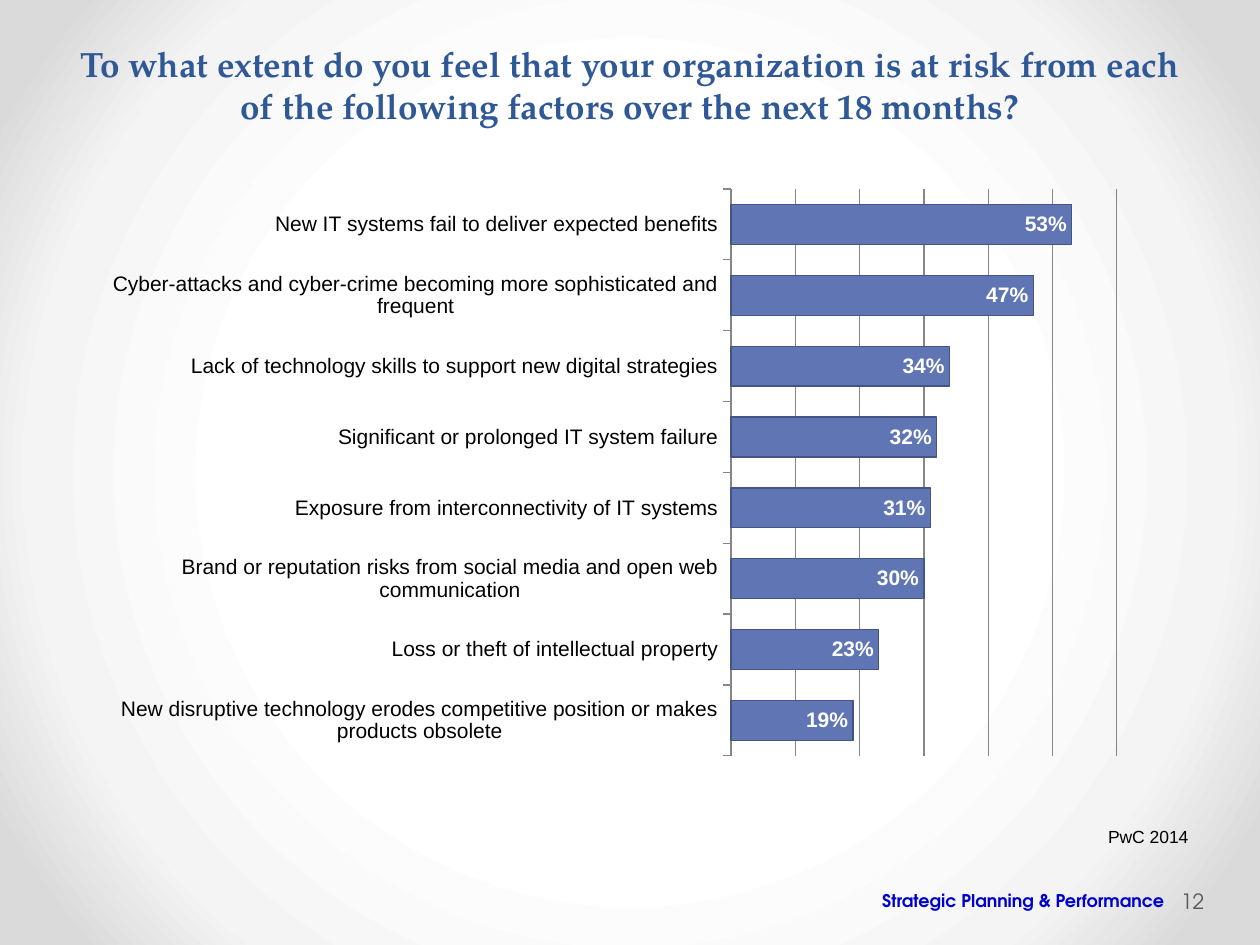
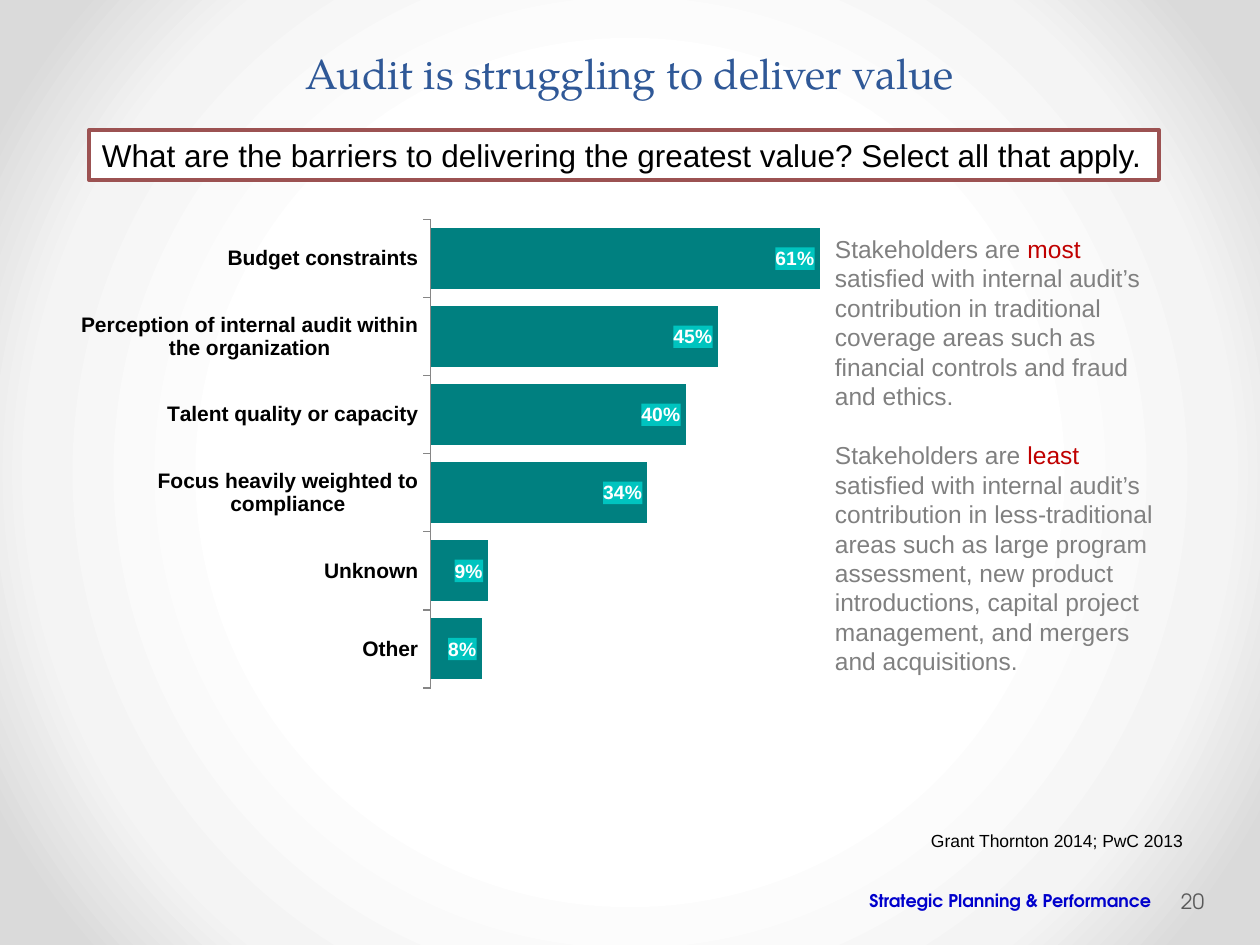
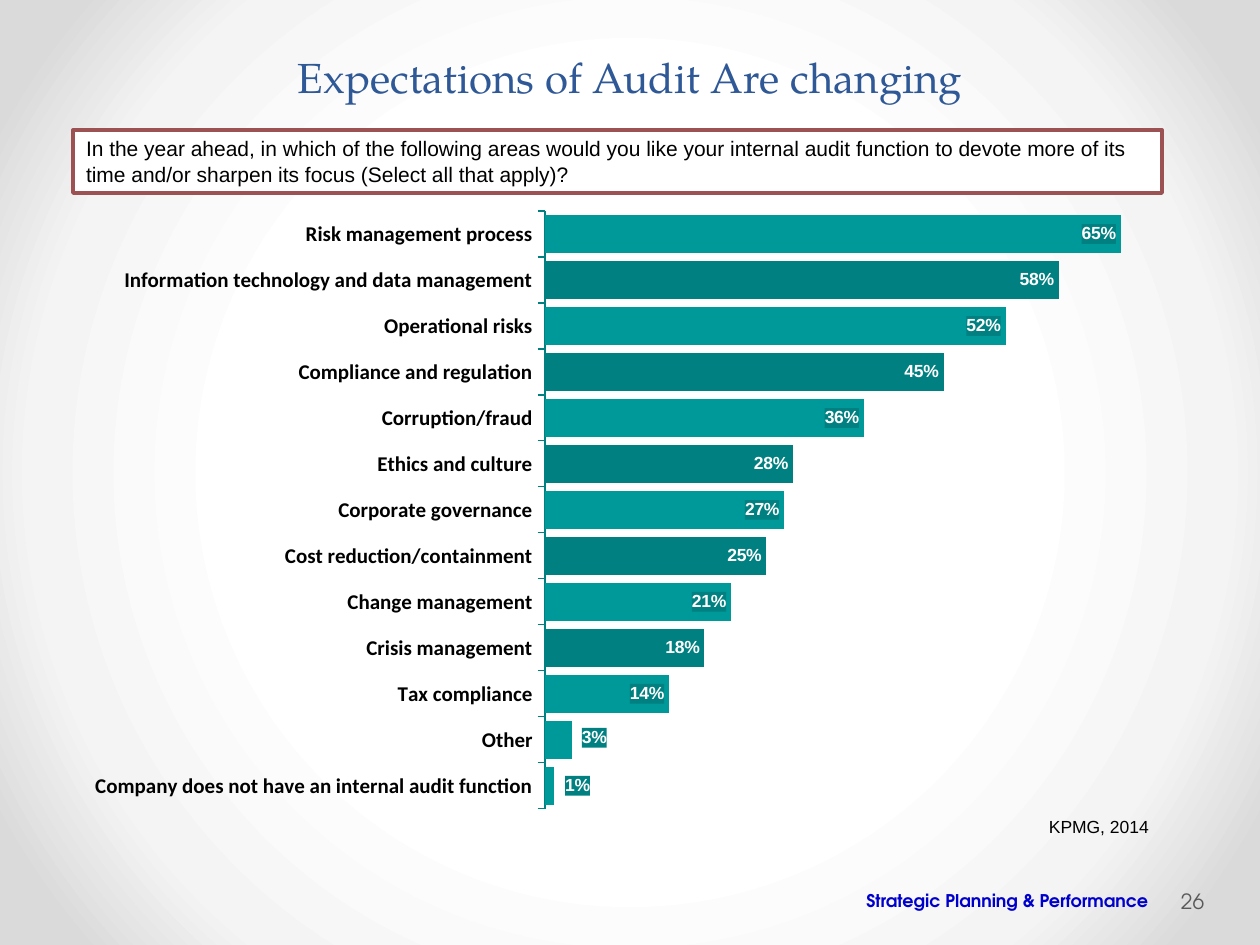
from copy import deepcopy
from dataclasses import dataclass
from typing import Any

from pptx import Presentation
from pptx.chart.chart import Chart
from pptx.chart.data import CategoryChartData
from pptx.dml.color import RGBColor
from pptx.enum.chart import XL_CHART_TYPE, XL_LABEL_POSITION, XL_TICK_MARK
from pptx.enum.shapes import MSO_SHAPE
from pptx.enum.text import MSO_ANCHOR, PP_ALIGN
from pptx.oxml import parse_xml
from pptx.oxml.ns import nsdecls, qn
from pptx.slide import Slide
from pptx.util import Emu, Pt

BAR_STACKED = XL_CHART_TYPE.BAR_STACKED
INSIDE_END = XL_LABEL_POSITION.INSIDE_END
TICK_OUTSIDE, TICK_NONE = XL_TICK_MARK.OUTSIDE, XL_TICK_MARK.NONE
RECTANGLE = MSO_SHAPE.RECTANGLE
TOP, MIDDLE = MSO_ANCHOR.TOP, MSO_ANCHOR.MIDDLE
LEFT, CENTER, RIGHT = PP_ALIGN.LEFT, PP_ALIGN.CENTER, PP_ALIGN.RIGHT

PX_PER_INCH = 126
SLIDE_WIDTH, SLIDE_HEIGHT = 1260, 945
SERIF, SANS, ROUND = "TeX Gyre Pagella", "Arial", "TeX Gyre Adventor"
COLORS = {
    "title": "2F5897", "footer": "0000CC", "number": "595959",
    "black": "000000", "white": "FFFFFF", "gray": "808080",
    "emphasis": "C00000", "callout": "9C5252", "axis": "868686",
    "blue": "6076B4", "blue edge": "445487",
    "teal": "008080", "light teal": "009999", "label cyan": "00C4BF",
}
BACKGROUND_STOPS = [(50, "FFFFFF"), (76, "F4F4F4"), (92, "DADADA")]
TIGHT_INSETS = (6, 6, 13, 6)
DEFAULT_INSETS = (13, 6, 13, 6)


@dataclass(frozen=True)
class Box:
    left: int
    top: int
    width: int
    height: int

    def emu(self) -> list[Emu]:
        return [px(side) for side in (self.left, self.top, self.width, self.height)]


@dataclass(frozen=True)
class TextStyle:
    size: int
    font: str = SANS
    color: str = "black"
    bold: bool = False
    align: Any = LEFT
    anchor: Any = TOP
    insets: tuple[int, int, int, int] = DEFAULT_INSETS
    wrap: bool = True
    paragraph_gap: int = 0


@dataclass(frozen=True)
class BarChart:
    box: Box
    plot: Box
    bars: list[tuple[str, float]]
    maximum: float
    gap: int
    color: str
    category_font: str = SANS
    category_bold: bool = True
    axis_color: str = "axis"
    edge: str = ""
    gridlines: bool = False
    label_size: int = 10
    label_fill: str = ""
    alternate: tuple[int, ...] = ()
    shifted_labels: tuple[tuple[int, int, int], ...] = ()


@dataclass(frozen=True)
class Page:
    title: str
    title_height: int
    title_style: TextStyle
    number: str
    footer: Box
    source: str
    source_box: Box
    chart: BarChart


Runs = list[tuple[str, str]]

BOLD_TITLE = TextStyle(20, SERIF, "title", True, CENTER, MIDDLE)
PLAIN_TITLE = TextStyle(24, SERIF, "title", False, CENTER, MIDDLE)
FOOTER = TextStyle(10, ROUND, "footer", True, RIGHT, MIDDLE, TIGHT_INSETS)
NUMBER = TextStyle(12, ROUND, "number", anchor=MIDDLE, insets=(4, 6, 6, 6))
SOURCE = TextStyle(10, wrap=False)
COMMENTARY = TextStyle(14, color="gray", paragraph_gap=17)

RISK_BARS = [
    ("New disruptive technology erodes competitive position or makes products obsolete", 0.19),
    ("Loss or theft of intellectual property", 0.23),
    ("Brand or reputation risks from social media and open web communication", 0.3),
    ("Exposure from interconnectivity of IT systems", 0.31),
    ("Significant or prolonged IT system failure", 0.32),
    ("Lack of technology skills to support new digital strategies", 0.34),
    ("Cyber-attacks and cyber-crime becoming more sophisticated and frequent", 0.47),
    ("New IT systems fail to deliver expected benefits", 0.53),
]
BARRIER_BARS = [
    ("Other", 0.08),
    ("Unknown", 0.09),
    ("Focus heavily weighted to compliance", 0.34),
    ("Talent quality or capacity", 0.4),
    ("Perception of internal audit within the organization", 0.45),
    ("Budget constraints", 0.61),
]
FOCUS_BARS = [
    ("Company does not have an internal audit function", 0.01),
    ("Other", 0.03),
    ("Tax compliance", 0.14),
    ("Crisis management", 0.18),
    ("Change management", 0.21),
    ("Cost reduction/containment", 0.25),
    ("Corporate governance", 0.27),
    ("Ethics and culture", 0.28),
    ("Corruption/fraud", 0.36),
    ("Compliance and regulation", 0.45),
    ("Operational risks", 0.52),
    ("Information technology and data management", 0.58),
    ("Risk management process", 0.65),
]
RISK_PAGE = Page(
    "To what extent do you feel that your organization is at risk from each "
    "of the following factors over the next 18 months?",
    106, BOLD_TITLE, "12", Box(785, 876, 392, 50),
    "PwC 2014", Box(1095, 820, 107, 34),
    BarChart(Box(101, 178, 1037, 591), Box(731, 189, 386, 567), RISK_BARS, 0.6, 78, "blue",
             category_bold=False, edge="blue edge", gridlines=True, label_size=12),
)
BARRIER_PAGE = Page(
    "Audit is struggling to deliver value",
    84, PLAIN_TITLE, "20", Box(830, 876, 334, 50),
    "Grant Thornton 2014; PwC 2013", Box(918, 824, 278, 34),
    BarChart(Box(81, 219, 805, 503), Box(429, 219, 448, 469), BARRIER_BARS, 0.7, 28, "teal",
             label_size=11, label_fill="label cyan"),
)
FOCUS_PAGE = Page(
    "Expectations of Audit Are changing",
    91, PLAIN_TITLE, "26", Box(849, 876, 312, 50),
    "KPMG, 2014", Box(1036, 810, 126, 34),
    BarChart(Box(73, 199, 1114, 624), Box(545, 211, 620, 598), FOCUS_BARS, 0.7, 22, "light teal",
             category_font="Calibri", axis_color="teal", label_fill="teal",
             alternate=tuple(range(3, 12, 2)),
             shifted_labels=((0, 41, 0), (1, 40, -2))),
)
STAKEHOLDER_COMMENTS: list[Runs] = [
    [("Stakeholders are ", "gray"), ("most", "emphasis"),
     (" satisfied with internal audit’s contribution in traditional coverage areas such as "
      "financial controls and fraud and ethics.", "gray")],
    [("Stakeholders are ", "gray"), ("least", "emphasis"),
     (" satisfied with internal audit’s contribution in less-traditional areas such as large "
      "program assessment, new product introductions, capital project management, and mergers "
      "and acquisitions.", "gray")],
]


def px(length: int) -> Emu:
    return Emu(round(length * 914400 / PX_PER_INCH))


def rgb(name: str) -> RGBColor:
    return RGBColor.from_string(COLORS[name])


def set_attributes(target: Any, values: dict[str, Any]) -> None:
    for name, value in values.items():
        setattr(target, name, value)


def set_font(font: Any, size: int, name: str, color: str, bold: bool) -> None:
    set_attributes(font, {"size": Pt(size), "name": name, "bold": bold})
    font.color.rgb = rgb(color)


def set_fill(fill: Any, color: str) -> None:
    fill.solid()
    fill.fore_color.rgb = rgb(color)


def set_line(line: Any, color: str, width: float) -> None:
    line.color.rgb = rgb(color)
    line.width = Pt(width)


def set_background(presentation: Any) -> None:
    """Give the slide master the circular gradient that every slide shows."""
    master = presentation.slide_master
    master.background.fill.gradient()
    linear = next(master.element.iter(qn("a:gradFill")))
    stops = "".join(f'<a:gs pos="{position * 1000}"><a:srgbClr val="{color}"/></a:gs>'
                    for position, color in BACKGROUND_STOPS)
    circular = parse_xml(
        f'<a:gradFill {nsdecls("a")} rotWithShape="1"><a:gsLst>{stops}</a:gsLst>'
        '<a:path path="circle"><a:fillToRect l="50000" t="50000" r="50000" b="50000"/></a:path>'
        "</a:gradFill>")
    linear.getparent().replace(linear, circular)


def write_text(shape: Any, paragraphs: list[Runs], style: TextStyle) -> None:
    frame = shape.text_frame
    left, top, right, bottom = (px(inset) for inset in style.insets)
    set_attributes(frame, {
        "word_wrap": style.wrap, "vertical_anchor": style.anchor,
        "margin_left": left, "margin_top": top, "margin_right": right, "margin_bottom": bottom,
    })
    for index, runs in enumerate(paragraphs):
        paragraph = frame.add_paragraph() if index else frame.paragraphs[0]
        paragraph.alignment = style.align
        if index:
            paragraph.space_before = Pt(style.paragraph_gap)
        for text, color in runs:
            run = paragraph.add_run()
            run.text = text
            set_font(run.font, style.size, style.font, color, style.bold)


def add_text(slide: Slide, box: Box, text: str, style: TextStyle) -> None:
    write_text(slide.shapes.add_textbox(*box.emu()), [[(text, style.color)]], style)


def add_callout(slide: Slide, box: Box, text: str, size: int) -> None:
    shape = slide.shapes.add_shape(RECTANGLE, *box.emu())
    shape.shadow.inherit = False
    set_fill(shape.fill, "white")
    set_line(shape.line, "callout", 2.25)
    write_text(shape, [[(text, "black")]], TextStyle(size))


def layout_xml(values: dict[str, Any]) -> str:
    items = "".join(f'<c:{name} val="{value}"/>' for name, value in values.items())
    return f'<c:layout {nsdecls("c")}><c:manualLayout>{items}</c:manualLayout></c:layout>'


def place_plot(chart: Chart, box: Box, plot: Box) -> None:
    """Fix the inner plot area inside the chart frame."""
    area = next(chart.element.iter(qn("c:plotArea")))
    for layout in area.findall(qn("c:layout")):
        area.remove(layout)
    area.insert(0, parse_xml(layout_xml({
        "layoutTarget": "inner", "xMode": "edge", "yMode": "edge",
        "x": round((plot.left - box.left) / box.width, 4),
        "y": round((plot.top - box.top) / box.height, 4),
        "w": round(plot.width / box.width, 4),
        "h": round(plot.height / box.height, 4),
    })))


def format_labels(chart: Chart, bar_chart: BarChart) -> None:
    """Style the bar labels, then move the ones too wide for their bar."""
    labels = chart.plots[0].series[0].data_labels
    set_attributes(labels, {"show_value": True, "number_format": "0%",
                            "number_format_is_linked": False, "position": INSIDE_END})
    set_font(labels.font, bar_chart.label_size, SANS, "white", True)
    element = next(chart.element.iter(qn("c:dLbls")))
    for leader in element.findall(qn("c:showLeaderLines")):
        element.remove(leader)
    if bar_chart.label_fill:
        element.find(qn("c:numFmt")).addnext(parse_xml(
            f'<c:spPr {nsdecls("c", "a")}><a:solidFill>'
            f'<a:srgbClr val="{COLORS[bar_chart.label_fill]}"/></a:solidFill></c:spPr>'))
    shared = list(element)
    for position, (index, right, down) in enumerate(bar_chart.shifted_labels):
        offset = layout_xml({"x": round(right / bar_chart.box.width, 4),
                             "y": round(down / bar_chart.box.height, 4)})
        label = parse_xml(f'<c:dLbl {nsdecls("c")}><c:idx val="{index}"/>{offset}</c:dLbl>')
        label.extend(deepcopy(child) for child in shared)
        element.insert(position, label)


def format_axes(chart: Chart, bar_chart: BarChart) -> None:
    category_axis, value_axis = chart.category_axis, chart.value_axis
    set_attributes(category_axis, {"major_tick_mark": TICK_OUTSIDE, "minor_tick_mark": TICK_NONE,
                                   "has_major_gridlines": False})
    set_line(category_axis.format.line, bar_chart.axis_color, 0.75)
    set_font(category_axis.tick_labels.font, 12, bar_chart.category_font, "black",
             bar_chart.category_bold)
    set_attributes(value_axis, {"minimum_scale": 0, "maximum_scale": bar_chart.maximum,
                                "major_unit": 0.1, "visible": False,
                                "has_major_gridlines": bar_chart.gridlines})
    if bar_chart.gridlines:
        set_line(value_axis.major_gridlines.format.line, "axis", 0.75)


def add_bar_chart(slide: Slide, bar_chart: BarChart) -> None:
    categories, values = zip(*bar_chart.bars)
    data = CategoryChartData(number_format="0%")
    data.categories = categories
    data.add_series("Series 1", values)
    chart = slide.shapes.add_chart(BAR_STACKED, *bar_chart.box.emu(), data).chart
    set_attributes(chart, {"has_title": False, "has_legend": False})
    set_font(chart.font, 10, SERIF, "black", False)
    plot = chart.plots[0]
    set_attributes(plot, {"gap_width": bar_chart.gap, "overlap": 100,
                          "vary_by_categories": False})
    series = plot.series[0]
    set_fill(series.format.fill, bar_chart.color)
    if bar_chart.edge:
        set_line(series.format.line, bar_chart.edge, 0.75)
    for index in bar_chart.alternate:
        set_fill(series.points[index].format.fill, "teal")
    format_axes(chart, bar_chart)
    format_labels(chart, bar_chart)
    place_plot(chart, bar_chart.box, bar_chart.plot)


def add_page(presentation: Any, page: Page) -> Slide:
    slide = presentation.slides.add_slide(presentation.slide_layouts[6])
    add_text(slide, Box(63, 31, 1134, page.title_height), page.title, page.title_style)
    add_bar_chart(slide, page.chart)
    add_text(slide, page.source_box, page.source, SOURCE)
    add_text(slide, page.footer, "Strategic Planning & Performance", FOOTER)
    add_text(slide, Box(1177, 876, 77, 50), page.number, NUMBER)
    return slide


def main() -> None:
    presentation = Presentation()
    set_attributes(presentation, {"slide_width": px(SLIDE_WIDTH), "slide_height": px(SLIDE_HEIGHT)})
    set_background(presentation)

    add_page(presentation, RISK_PAGE)

    barriers = add_page(presentation, BARRIER_PAGE)
    add_callout(barriers, Box(89, 130, 1070, 50),
                "What are the barriers to delivering the greatest value? Select all that apply.", 18)
    commentary = barriers.shapes.add_textbox(*Box(822, 228, 355, 484).emu())
    write_text(commentary, STAKEHOLDER_COMMENTS, COMMENTARY)

    focus = add_page(presentation, FOCUS_PAGE)
    add_callout(focus, Box(73, 130, 1089, 63),
                "In the year ahead, in which of the following areas would you like your internal "
                "audit function to devote more of its time and/or sharpen its focus "
                "(Select all that apply)?", 12)

    presentation.save("out.pptx")


if __name__ == "__main__":
    main()
